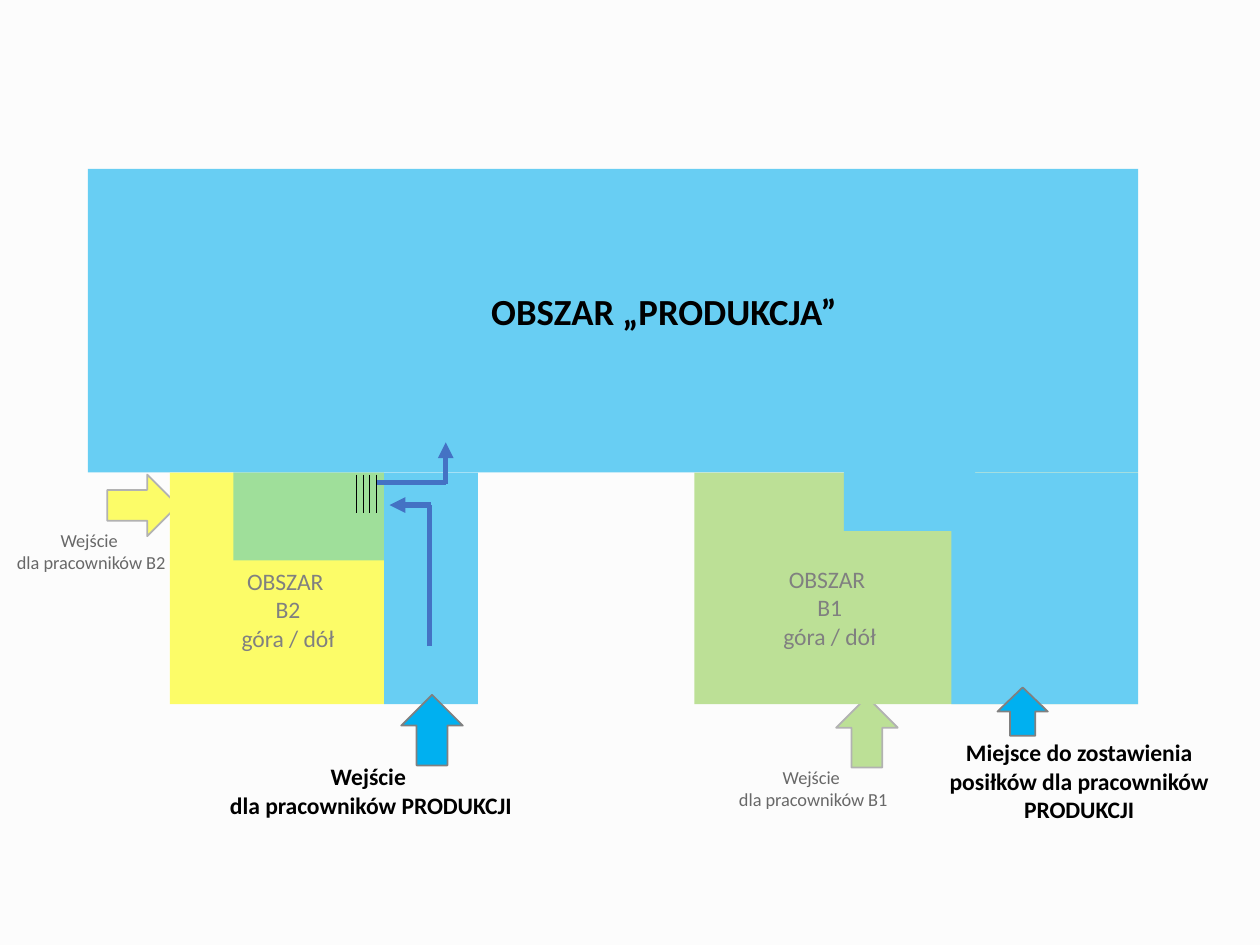
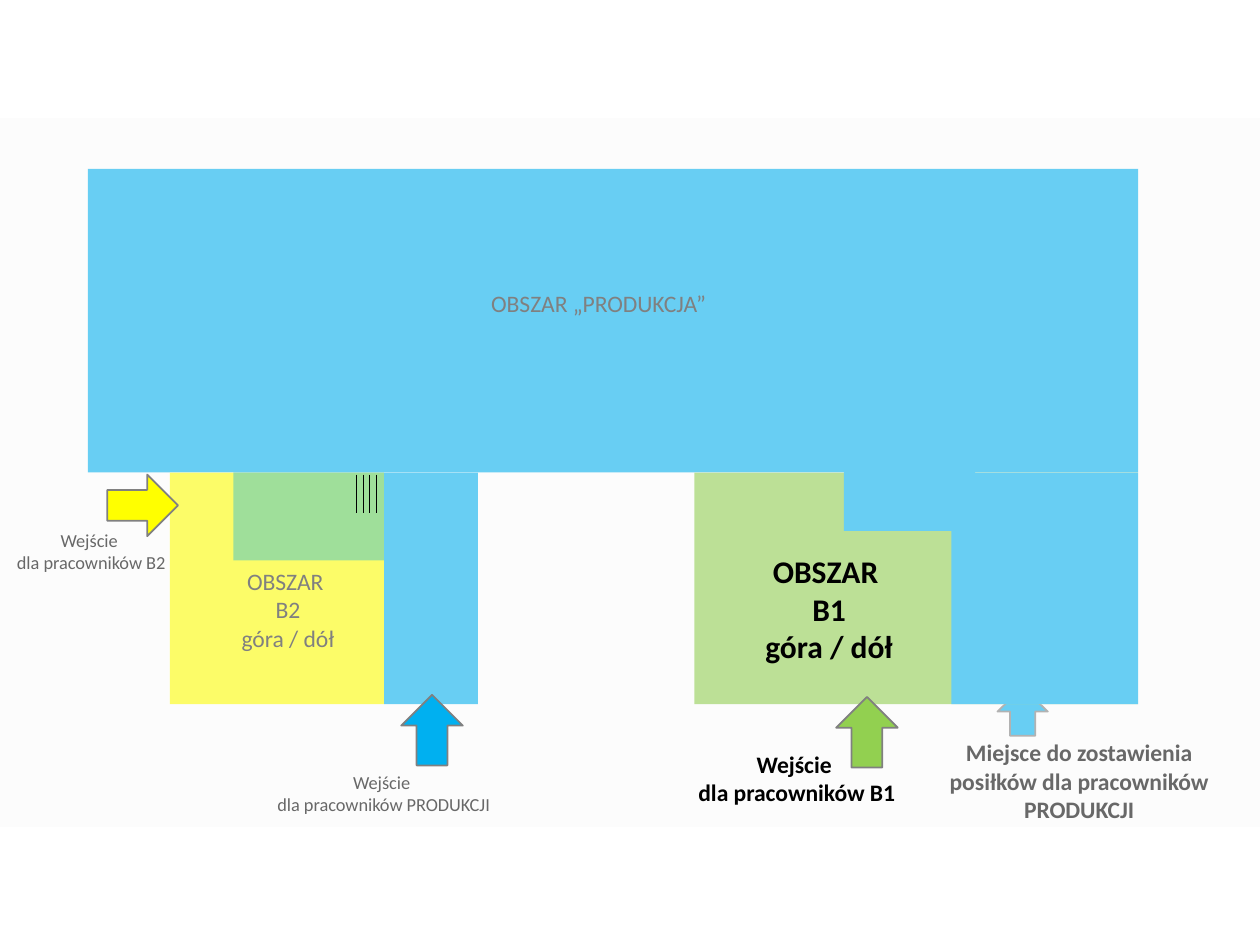
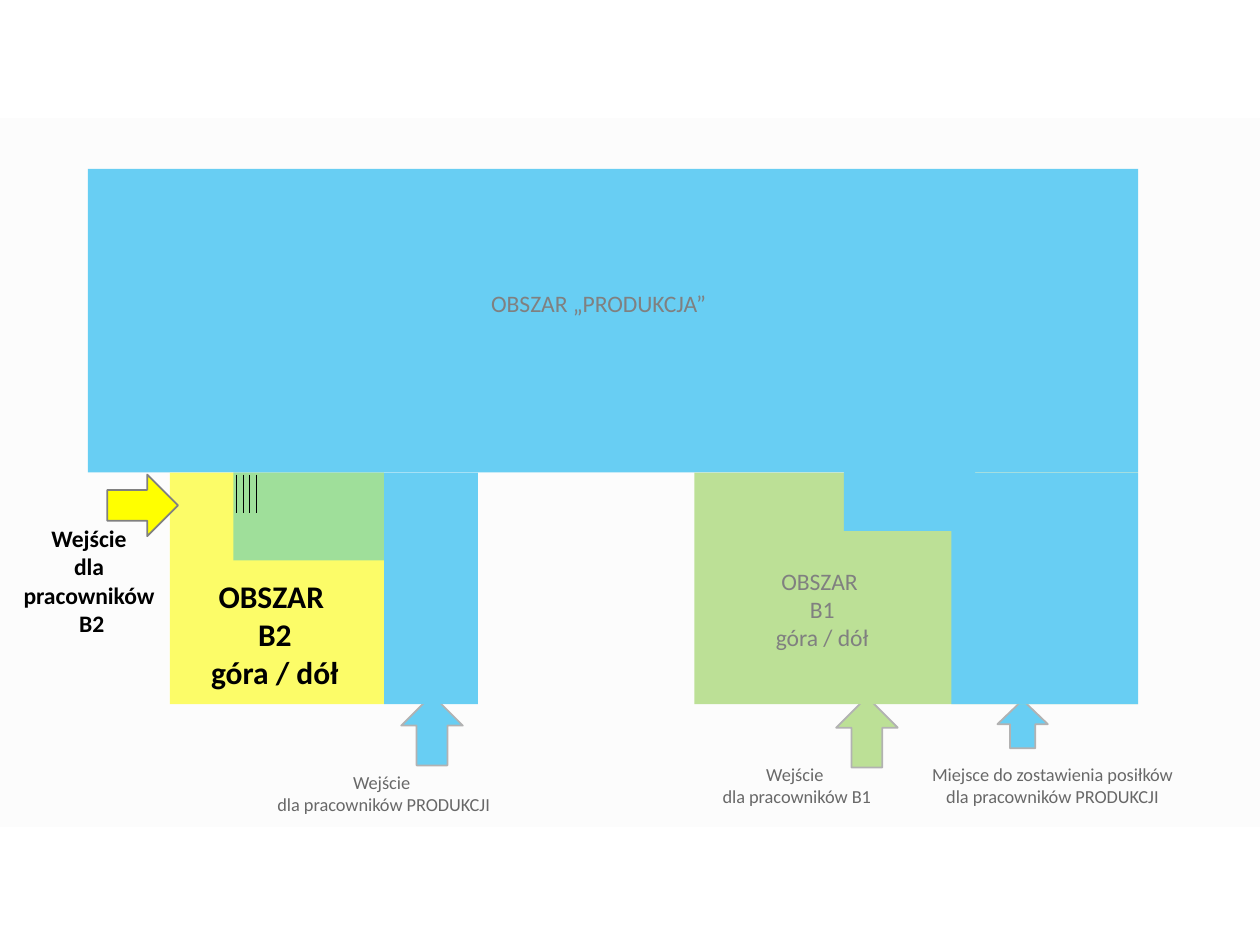
from copy import deepcopy
from dataclasses import dataclass

from lxml import etree
from pptx import Presentation
from pptx import slide as s
from pptx import util as u
from pptx.dml import color as c
from pptx.enum import shapes, text
from pptx.oxml import ns

COLOURS = {
    "blue": "00B0F0",
    "yellow": "FFFF00",
    "green": "92D050",
    "veil": "F8F8F8",
    "outline": "808080",
    "grey": "808080",
    "black": "000000",
    "route": "4472C4",
}
STYLES = {
    "small": ("black", {"size": u.Pt(10.5), "bold": False}),
    "strong": ("black", {"size": u.Pt(13.5), "bold": True}),
    "muted": ("grey", {"size": u.Pt(13.5), "bold": False}),
    "area": ("black", {"size": u.Pt(18), "bold": True}),
    "heading": ("black", {"size": u.Pt(21), "bold": True}),
}
PRODUCTION = "OBSZAR „PRODUKCJA”"
AREA_B1 = "OBSZAR \vB1\ngóra / dół"
AREA_B2 = "OBSZAR \vB2\ngóra / dół"
ENTRY_B1 = "Wejście \vdla pracowników B1"
ENTRY_B2 = "Wejście \vdla pracowników B2"
ENTRY_B2_NARROW = "Wejście \vdla \vpracowników \vB2"
ENTRY_PRODUCTION = "Wejście \vdla pracowników PRODUKCJI"
MEALS = "Miejsce do zostawienia posiłków dla pracowników PRODUKCJI"


@dataclass(frozen=True)
class Block:
    left: float
    top: float
    width: float
    height: float
    colour: str
    opacity: int = 100


@dataclass(frozen=True)
class Arrow:
    left: float
    top: float
    colour: str
    width: float = 40.4
    height: float = 35.2
    rotation: int = 270


@dataclass(frozen=True)
class Label:
    words: str
    style: str
    left: float
    top: float
    width: float
    wrapped_lines: int = 0
    centred: bool = True


@dataclass(frozen=True)
class Route:
    start: tuple[float, float]
    end: tuple[float, float]
    colour: str = "route"
    weight: float = 3
    pointed: bool = False


@dataclass(frozen=True)
class Scene:
    veil: Block
    behind: list[Arrow | Label]
    front: list[Arrow | Label | Route]
    stairs_left: float = 203.6


WING_TOP, WING_HEIGHT = 270, 132.4
PLAN = [
    Block(50.2, 96.5, 600.2, 173.5, "blue"),
    Block(97.1, WING_TOP, 122.4, WING_HEIGHT, "yellow"),
    Block(396.8, WING_TOP, 253.5, WING_HEIGHT, "green"),
    Block(219.5, WING_TOP, 53.7, WING_HEIGHT, "blue"),
    Block(482.3, 257.6, 75, 45.8, "blue"),
    Block(543.7, WING_TOP, 106.6, WING_HEIGHT, "blue"),
]
ANNEX = Block(133.4, WING_TOP, 86, 50.3, "blue", 37)
FULL_VEIL = Block(0, 0, 720, 540, "veil", 42)
BAND_VEIL = Block(0, 67.5, 720, 405, "veil", 42)
STAIR_COUNT, STAIR_STEP, STAIR_TOP, STAIR_BOTTOM = 4, 3.85, 271.2, 293.2

ARROW_B1 = Arrow(475.2, 400.8, "green")
ARROW_B2 = Arrow(61.3, 271.2, "yellow", rotation=0)
ARROW_PRODUCTION = Arrow(226.7, 399.6, "blue")
ARROW_MEALS = Arrow(570.6, 392.2, "blue", 27.6, 28.8)
ARROW_MEALS_LOW = Arrow(570.6, 399.4, "blue", 27.6, 28.8)

MEALS_STRONG = Label(MEALS, "strong", 529.9, 418.3, 173.5, 3)
ENTRY_B2_SMALL = Label(ENTRY_B2, "small", 1.4, 298.8, 101.5)
ENTRY_PRODUCTION_SMALL = Label(ENTRY_PRODUCTION, "small", 149.8, 437, 139)
PRODUCTION_MUTED = Label(PRODUCTION, "muted", 273.6, 161.3, 139, centred=False)
AREA_B2_MUTED = Label(AREA_B2, "muted", 130.3, 320.4, 68.4)

SCENES = [
    Scene(
        FULL_VEIL,
        [ARROW_B1, ARROW_B2, Label(ENTRY_B1, "small", 414, 434.2, 101.5), ENTRY_B2_SMALL],
        [
            Label(PRODUCTION, "heading", 273.6, 161.3, 214.6, centred=False),
            ARROW_PRODUCTION,
            Label(ENTRY_PRODUCTION, "strong", 123.1, 432, 177.8),
            Route((246.2, 288.6), (222.6, 288.6), pointed=True),
            Route((254.7, 276.5), (254.7, 252.8), pointed=True),
            Route((245.5, 369.2), (245.5, 288.6)),
            Route((215.3, 275.8), (254.9, 275.8)),
            AREA_B2_MUTED,
            Label(AREA_B1, "muted", 439.9, 319.2, 68.4),
            ARROW_MEALS,
            MEALS_STRONG,
        ],
    ),
    Scene(
        BAND_VEIL,
        [ARROW_MEALS, MEALS_STRONG, ENTRY_B2_SMALL, ENTRY_PRODUCTION_SMALL],
        [
            PRODUCTION_MUTED,
            AREA_B2_MUTED,
            Label(AREA_B1, "area", 429.9, 311.8, 87.8),
            ARROW_B1,
            ARROW_PRODUCTION,
            ARROW_B2,
            Label(ENTRY_B1, "strong", 391.2, 425, 128.2),
        ],
    ),
    Scene(
        BAND_VEIL,
        [
            ARROW_B1,
            ARROW_PRODUCTION,
            Label(MEALS, "small", 519.8, 432.7, 163.4, 2),
            ARROW_MEALS_LOW,
            Label(ENTRY_B1, "small", 404.6, 432.7, 101.5),
            ENTRY_PRODUCTION_SMALL,
        ],
        [
            PRODUCTION_MUTED,
            Label(ENTRY_B2_NARROW, "strong", 5.6, 295.9, 93.6),
            Label(AREA_B1, "muted", 435.6, 320.2, 68.4),
            Label(AREA_B2, "area", 113.2, 326.2, 87.8),
            ARROW_B2,
        ],
        stairs_left=135,
    ),
]


def rgb(name: str) -> c.RGBColor:
    """Return the named colour."""
    return c.RGBColor.from_string(COLOURS[name])


def add_block(page: s.Slide, block: Block) -> None:
    """Draw a borderless, possibly translucent rectangle."""
    bounds = map(u.Pt, (block.left, block.top, block.width, block.height))
    box = page.shapes.add_shape(shapes.MSO_SHAPE.RECTANGLE, *bounds)
    box.shadow.inherit = False
    box.fill.solid()
    box.fill.fore_color.rgb = rgb(block.colour)
    box.line.fill.background()
    if block.opacity < 100:
        tint = next(box._element.iter(ns.qn("a:srgbClr")))
        etree.SubElement(tint, ns.qn("a:alpha"), val=str(block.opacity * 1000))


def add_arrow(page: s.Slide, arrow: Arrow) -> None:
    """Draw an outlined entrance arrow."""
    bounds = map(u.Pt, (arrow.left, arrow.top, arrow.width, arrow.height))
    box = page.shapes.add_shape(shapes.MSO_SHAPE.RIGHT_ARROW, *bounds)
    box.rotation = arrow.rotation
    box.shadow.inherit = False
    box.fill.solid()
    box.fill.fore_color.rgb = rgb(arrow.colour)
    box.line.color.rgb = rgb("outline")
    box.line.width = u.Pt(1)


def add_label(page: s.Slide, label: Label) -> None:
    """Write a label in a box as tall as its lines."""
    colour, font_values = STYLES[label.style]
    lines = label.wrapped_lines or len(label.words.splitlines())
    height = round(lines * font_values["size"].pt * 1.22 + 7.2, 1)
    bounds = map(u.Pt, (label.left, label.top, label.width, height))
    frame = page.shapes.add_textbox(*bounds).text_frame
    frame.text = label.words
    frame.word_wrap = label.wrapped_lines > 0
    frame.auto_size = text.MSO_AUTO_SIZE.SHAPE_TO_FIT_TEXT
    for para in frame.paragraphs:
        para.alignment = text.PP_ALIGN.CENTER if label.centred else text.PP_ALIGN.LEFT
        for span in para.runs:
            for name, value in {"name": "Calibri", **font_values}.items():
                setattr(span.font, name, value)
            span.font.color.rgb = rgb(colour)
        for line_break in para._p.iterfind(ns.qn("a:br")):
            line_break.insert(0, deepcopy(para.runs[0]._r.rPr))


def add_route(page: s.Slide, route: Route) -> None:
    """Draw a straight line, with an arrowhead at its end if pointed."""
    ends = map(u.Pt, (*route.start, *route.end))
    line = page.shapes.add_connector(shapes.MSO_CONNECTOR.STRAIGHT, *ends)
    line.line.color.rgb = rgb(route.colour)
    line.line.width = u.Pt(route.weight)
    if route.pointed:
        etree.SubElement(line.line._get_or_add_ln(), ns.qn("a:tailEnd"), type="triangle")
    etree.SubElement(line._element.spPr, ns.qn("a:effectLst"))


DRAWERS = {Block: add_block, Arrow: add_arrow, Label: add_label, Route: add_route}


def stairs(left: float) -> list[Route]:
    """Return the evenly spaced treads of the staircase."""
    places = [left + step * STAIR_STEP for step in range(STAIR_COUNT)]
    return [Route((x, STAIR_TOP), (x, STAIR_BOTTOM), "black", 0.5) for x in places]


def main() -> None:
    """Build the three entrance plans."""
    deck = Presentation()
    deck.slide_width, deck.slide_height = u.Pt(720), u.Pt(540)
    for scene in SCENES:
        page = deck.slides.add_slide(deck.slide_layouts[6])
        treads = stairs(scene.stairs_left)
        for item in [*scene.behind, *PLAN, scene.veil, ANNEX, *treads, *scene.front]:
            DRAWERS[type(item)](page, item)
    deck.save("out.pptx")


if __name__ == "__main__":
    main()
